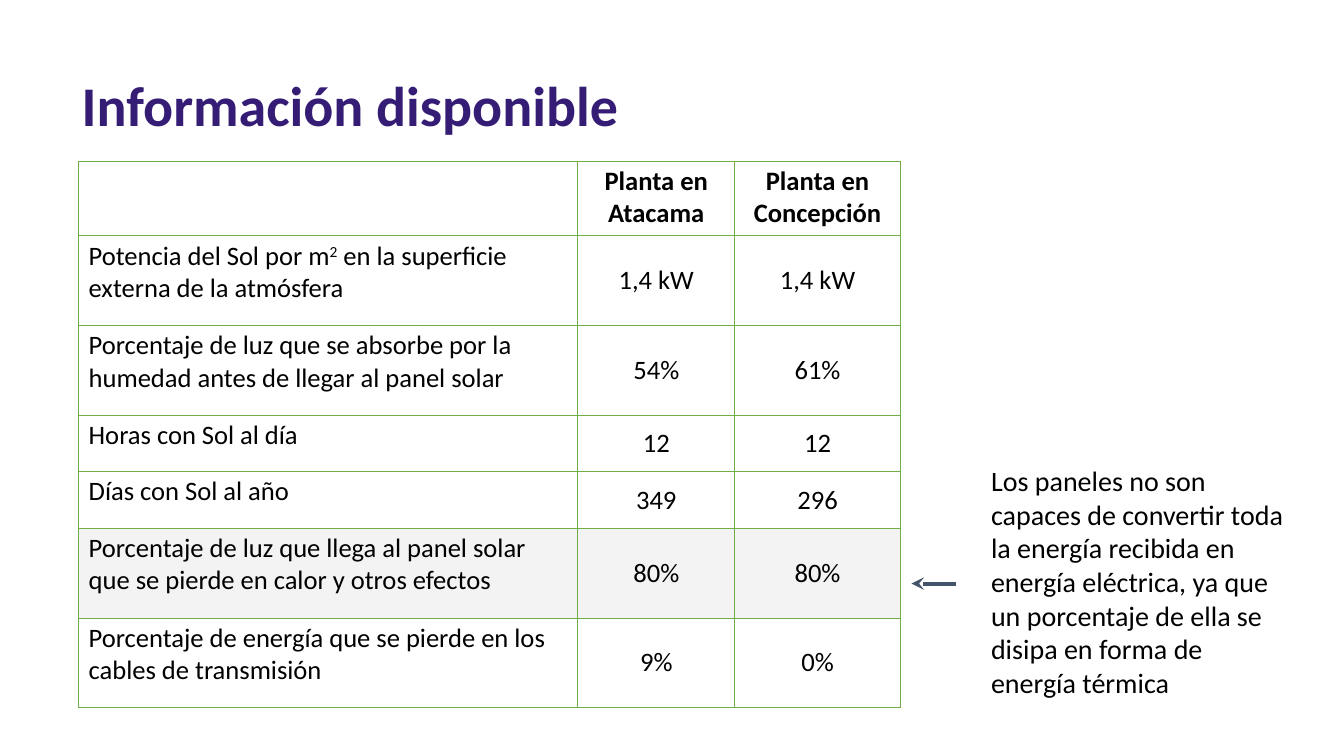
import dataclasses

import lxml.etree
import pptx
import pptx.dml.color
import pptx.enum.shapes
import pptx.enum.text
import pptx.oxml.ns
import pptx.util

ALIGN = pptx.enum.text.PP_ALIGN
ANCHOR = pptx.enum.text.MSO_ANCHOR
qn = pptx.oxml.ns.qn


@dataclasses.dataclass(frozen=True)
class Theme:
    font: str = "Calibri"
    title_size: int = 40
    table_size: int = 19
    note_size: int = 20
    title_color: str = "351C75"
    text_color: str = "000000"
    border_color: str = "70AD47"
    highlight: str = "F3F3F3"
    arrow_color: str = "44546A"
    border_width: float = 0.75
    arrow_width: float = 3


def rgb(code):
    return pptx.dml.color.RGBColor.from_string(code)


class SlideBuilder:
    """Holds the theme and the page; lengths are percentages of the slide's size."""

    def __init__(self, deck, theme):
        self.deck = deck
        self.theme = theme
        self.page = deck.slides.add_slide(deck.slide_layouts.get_by_name("Title Only"))

    def x(self, share):
        return round(self.deck.slide_width * share / 100)

    def y(self, share):
        return round(self.deck.slide_height * share / 100)

    def area(self, left, top, width, height):
        return self.x(left), self.y(top), self.x(width), self.y(height)

    def fill_para(self, para, text, size, color=None, bold=False, align=ALIGN.LEFT):
        para.alignment = align
        para.font.name = self.theme.font
        para.font.size = pptx.util.Pt(size)
        para.font.bold = bold
        para.font.color.rgb = rgb(color or self.theme.text_color)
        # A caret pair marks a superscript: every second part is raised
        for index, part in enumerate(text.split("^")):
            span = para.add_run()
            span.text = part
            if index % 2:
                span.font._element.set("baseline", "30000")

    def title(self, text, *area):
        box = self.page.shapes.title
        box.left, box.top, box.width, box.height = self.area(*area)
        frame = box.text_frame
        frame.vertical_anchor = ANCHOR.TOP
        frame.auto_size = pptx.enum.text.MSO_AUTO_SIZE.SHAPE_TO_FIT_TEXT
        self.fill_para(frame.paragraphs[0], text, self.theme.title_size,
                       self.theme.title_color, bold=True)

    def note(self, text, *area):
        frame = self.page.shapes.add_textbox(*self.area(*area)).text_frame
        frame.word_wrap = True
        frame.auto_size = pptx.enum.text.MSO_AUTO_SIZE.SHAPE_TO_FIT_TEXT
        self.fill_para(frame.paragraphs[0], text, self.theme.note_size)

    def border(self, cell):
        properties = cell._tc.get_or_add_tcPr()
        width = str(pptx.util.Pt(self.theme.border_width))
        for side in ("a:lnL", "a:lnR", "a:lnT", "a:lnB"):
            line = lxml.etree.SubElement(properties, qn(side), w=width)
            fill = lxml.etree.SubElement(line, qn("a:solidFill"))
            lxml.etree.SubElement(fill, qn("a:srgbClr"), val=self.theme.border_color)

    def table(self, rows, left, top, widths, heights, highlighted):
        area = self.area(left, top, sum(widths), sum(heights))
        table = self.page.shapes.add_table(len(rows), len(widths), *area).table
        table.first_row = table.horz_banding = False
        for column, width in zip(table.columns, widths):
            column.width = self.x(width)
        for row, height in zip(table.rows, heights):
            row.height = self.y(height)

        for row_index, texts in enumerate(rows):
            header = row_index == 0
            for column_index, text in enumerate(texts):
                cell = table.cell(row_index, column_index)
                value = column_index > 0
                cell.margin_top = cell.margin_bottom = pptx.util.Inches(0.04)
                cell.vertical_anchor = ANCHOR.MIDDLE if value and not header else ANCHOR.TOP
                self.border(cell)
                if row_index == highlighted:
                    cell.fill.solid()
                    cell.fill.fore_color.rgb = rgb(self.theme.highlight)
                else:
                    cell.fill.background()
                if text:
                    self.fill_para(cell.text_frame.paragraphs[0], text, self.theme.table_size,
                                   bold=header, align=ALIGN.CENTER if value else ALIGN.LEFT)

    def arrow(self, start, end, level):
        arrow = self.page.shapes.add_connector(
            pptx.enum.shapes.MSO_CONNECTOR.STRAIGHT,
            self.x(start), self.y(level), self.x(end), self.y(level))
        arrow.line.color.rgb = rgb(self.theme.arrow_color)
        arrow.line.width = pptx.util.Pt(self.theme.arrow_width)
        lxml.etree.SubElement(arrow.line._get_or_add_ln(), qn("a:tailEnd"), type="stealth")
        lxml.etree.SubElement(arrow._element.spPr, qn("a:effectLst"))


PLANT_DATA = [
    ("", "Planta en Atacama", "Planta en Concepción"),
    ("Potencia del Sol por m^2^ en la superficie externa de la atmósfera", "1,4 kW", "1,4 kW"),
    ("Porcentaje de luz que se absorbe por la humedad antes de llegar al panel solar",
     "54%", "61%"),
    ("Horas con Sol al día", "12", "12"),
    ("Días con Sol al año", "349", "296"),
    ("Porcentaje de luz que llega al panel solar que se pierde en calor y otros efectos",
     "80%", "80%"),
    ("Porcentaje de energía que se pierde en los cables de transmisión", "9%", "0%"),
]
HEAT_LOSS_ROW = 5
HEADER, TALL, SHORT = 9.87, 11.87, 7.47


def main():
    deck = pptx.Presentation()
    deck.slide_width = pptx.util.Inches(13.33)
    deck.slide_height = pptx.util.Inches(7.5)
    builder = SlideBuilder(deck, Theme())

    # Title
    builder.title("Información disponible", 5.33, 8.67, 64.44, 10.27)

    # Comparison of the two plants
    builder.table(PLANT_DATA, 5.85, 21.33, widths=(37.13, 11.7, 12.3),
                  heights=(HEADER, TALL, TALL, SHORT, SHORT, TALL, TALL),
                  highlighted=HEAT_LOSS_ROW)

    # Note pointing at the highlighted row
    builder.note("Los paneles no son capaces de convertir toda la energía recibida en "
                 "energía eléctrica, ya que un porcentaje de ella se disipa en forma de "
                 "energía térmica", 73, 60.67, 23.63, 32.8)
    builder.arrow(71.12, 67.82, 77.2)

    deck.save("out.pptx")


if __name__ == "__main__":
    main()
